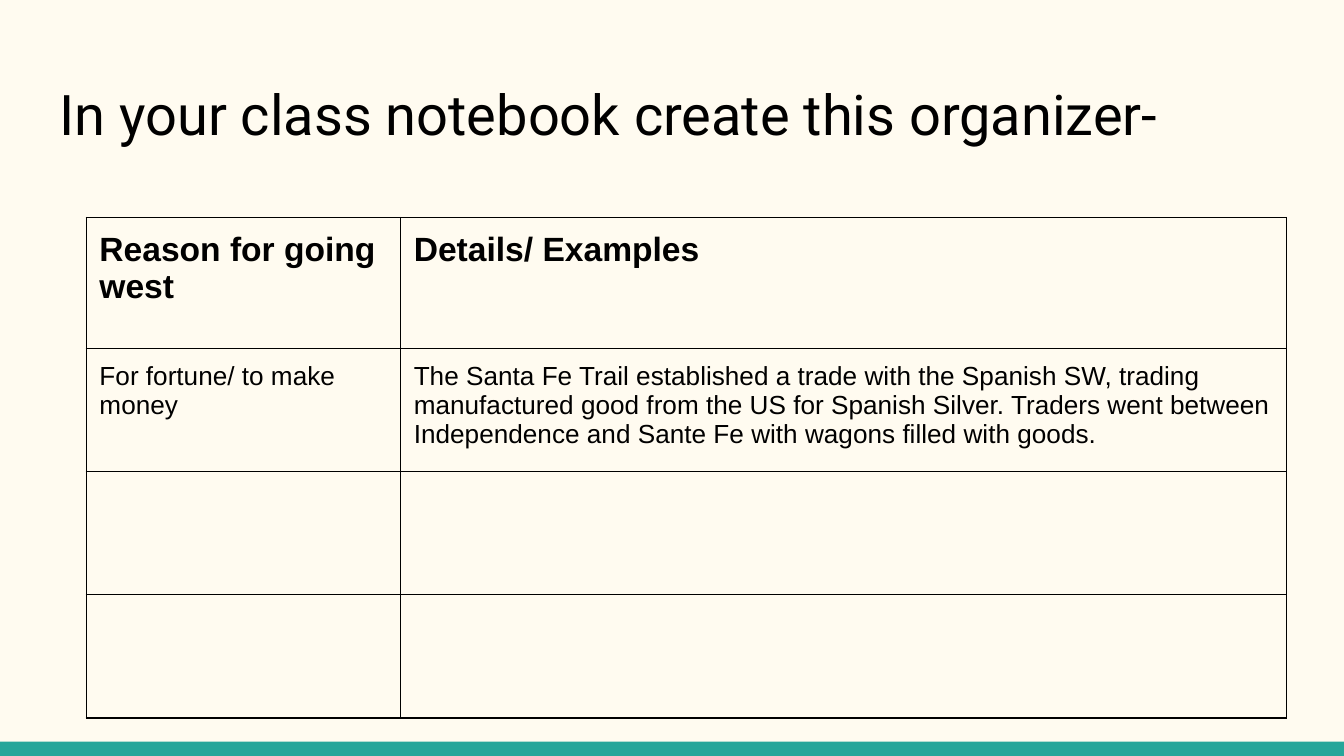
from lxml import etree
from pptx import Presentation
from pptx import util as u
from pptx.dml.color import RGBColor
from pptx.enum import shapes, text
from pptx.oxml import ns

COLORS = {"background": "FFFBF0", "band": "26A69A", "ink": "000000"}
INSET = u.Cm(0.25)
COLUMN_WIDTHS = [5.94, 16.74]
HEADER_HEIGHT, ROW_HEIGHT = 2.47, 2.33
ROWS = [
    ["Reason for going west", "Details/ Examples"],
    ["For fortune/ to make money",
     "The Santa Fe Trail established a trade with the Spanish SW, trading "
     "manufactured good from the US for Spanish Silver. Traders went between "
     "Independence and Sante Fe with wagons filled with goods."],
    ["", ""],
    ["", ""],
]


def color(name):
    return RGBColor.from_string(COLORS[name])


def set_insets(holder):
    holder.margin_left = holder.margin_right = INSET
    holder.margin_top = holder.margin_bottom = INSET


def format_text(frame, font_name, size, bold=False):
    for para in frame.paragraphs:
        para.alignment = text.PP_ALIGN.LEFT
        for font in [para.font] + [span.font for span in para.runs]:
            font.name = font_name
            font.size = u.Pt(size)
            font.bold = bold
            font.color.rgb = color("ink")


def add_band(page, deck):
    """Draw the coloured strip along the bottom edge."""
    height = u.Cm(0.27)
    band = page.shapes.add_shape(shapes.MSO_SHAPE.RECTANGLE, 0,
                                 deck.slide_height - height,
                                 deck.slide_width, height)
    band.shadow.inherit = False
    band.fill.solid()
    band.fill.fore_color.rgb = color("band")
    band.line.fill.background()


def fill_title(page, words):
    title = page.shapes.title
    title.left, title.top = u.Cm(0.87), u.Cm(1.25)
    title.width, title.height = u.Cm(23.67), u.Cm(1.7)
    frame = title.text_frame
    frame.text = words
    frame.word_wrap = True
    frame.auto_size = text.MSO_AUTO_SIZE.NONE
    frame.vertical_anchor = text.MSO_ANCHOR.TOP
    set_insets(frame)
    format_text(frame, "Roboto", 30)


def add_borders(cell):
    properties = cell._tc.get_or_add_tcPr()
    for position, side in enumerate(["lnL", "lnR", "lnT", "lnB"]):
        line = etree.Element(ns.qn(f"a:{side}"), w=str(u.Pt(0.75)))
        fill = etree.SubElement(line, ns.qn("a:solidFill"))
        etree.SubElement(fill, ns.qn("a:srgbClr"), val=COLORS["ink"])
        properties.insert(position, line)


def add_organizer(page):
    height = HEADER_HEIGHT + ROW_HEIGHT * (len(ROWS) - 1)
    table = page.shapes.add_table(
        len(ROWS), len(COLUMN_WIDTHS), u.Cm(1.63), u.Cm(4.11),
        u.Cm(sum(COLUMN_WIDTHS)), u.Cm(height)).table
    table.first_row = table.horz_banding = False
    for column, width in zip(table.columns, COLUMN_WIDTHS):
        column.width = u.Cm(width)
    for index, entries in enumerate(ROWS):
        header = index == 0
        table.rows[index].height = u.Cm(HEADER_HEIGHT if header else ROW_HEIGHT)
        for cell, words in zip(table.rows[index].cells, entries):
            cell.text_frame.text = words
            cell.vertical_anchor = text.MSO_ANCHOR.TOP
            set_insets(cell)
            format_text(cell.text_frame, "Arial", 18 if header else 14, header)
            cell.fill.background()
            add_borders(cell)


def main():
    deck = Presentation()
    deck.slide_width, deck.slide_height = u.Cm(25.4), u.Cm(14.29)
    page = deck.slides.add_slide(deck.slide_layouts[5])
    page.background.fill.solid()
    page.background.fill.fore_color.rgb = color("background")
    add_band(page, deck)
    fill_title(page, "In your class notebook create this organizer-")
    add_organizer(page)
    deck.save("out.pptx")


if __name__ == "__main__":
    main()
